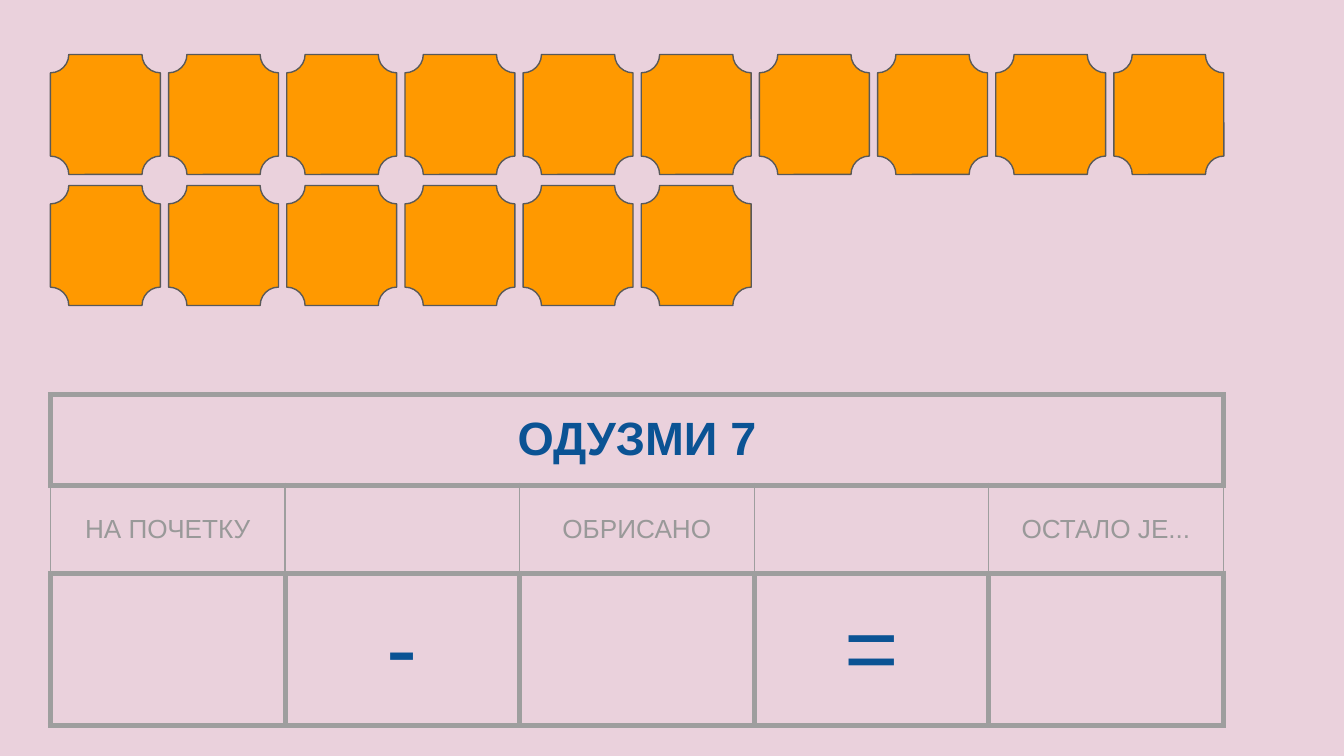
from dataclasses import dataclass

from lxml import etree
from pptx import Presentation
from pptx.dml.color import RGBColor
from pptx.enum.shapes import MSO_SHAPE as Shape
from pptx.enum.text import MSO_ANCHOR as Anchor, PP_ALIGN as Align
from pptx.oxml.ns import qn
from pptx.util import Pt


@dataclass(frozen=True)
class Theme:
    font: str = "Arial"
    background: str = "EAD1DC"
    tile: str = "FF9900"
    tile_line: str = "595959"
    border: str = "9E9E9E"
    accent: str = "0B5394"
    label: str = "999999"
    title_size: int = 25
    label_size: int = 14
    sign_size: int = 50
    thin: float = 0.75
    thick: float = 3


theme = Theme()


def set_borders(cell, side_width):
    """Draw the left and right edges at side_width, top and bottom thick."""
    properties = cell._tc.get_or_add_tcPr()
    widths = {"a:lnL": side_width, "a:lnR": side_width,
              "a:lnT": theme.thick, "a:lnB": theme.thick}
    for tag, width in widths.items():
        line = etree.SubElement(properties, qn(tag), w=str(Pt(width)))
        fill = etree.SubElement(line, qn("a:solidFill"))
        etree.SubElement(fill, qn("a:srgbClr"), val=theme.border)


presentation = Presentation()
presentation.slide_width, presentation.slide_height = Pt(720), Pt(405)
slide = presentation.slides.add_slide(presentation.slide_layouts[6])
slide.background.fill.solid()
slide.background.fill.fore_color.rgb = RGBColor.from_string(theme.background)

left = 27.05

# Subtraction table
column_width = 125.68
row_heights = [48.5, 47.3, 81.4]
rows = [
    ["ОДУЗМИ 7", "", "", "", ""],
    ["НА ПОЧЕТКУ", "", "ОБРИСАНО", "", "ОСТАЛО ЈЕ..."],
    ["", "-", "", "=", ""],
]
row_styles = [  # size, colour, bold, width of the side borders
    (theme.title_size, theme.accent, True, theme.thick),
    (theme.label_size, theme.label, False, theme.thin),
    (theme.sign_size, theme.accent, False, theme.thick),
]
table = slide.shapes.add_table(
    len(rows), 5, Pt(left), Pt(211.4), Pt(5 * column_width), Pt(sum(row_heights))
).table
table.first_row = table.horz_banding = False
for column in table.columns:
    column.width = Pt(column_width)

for row, height, texts, style in zip(table.rows, row_heights, rows, row_styles):
    row.height = Pt(height)
    size, color, bold, side_width = style
    for cell, text in zip(row.cells, texts):
        set_borders(cell, side_width)
        cell.fill.background()
        cell.vertical_anchor = Anchor.MIDDLE
        cell.margin_left = cell.margin_right = Pt(7.2)
        cell.margin_top = cell.margin_bottom = Pt(7.2)
        cell.text_frame.text = text
        paragraph = cell.text_frame.paragraphs[0]
        paragraph.alignment = Align.CENTER
        for run in paragraph.runs:
            run.font.name = theme.font
            run.font.size = Pt(size)
            run.font.bold = bold
            run.font.color.rgb = RGBColor.from_string(color)
table.cell(0, 0).merge(table.cell(0, 4))

# Counting tiles: ten in the first row, six in the second
for tile_row, count in enumerate([10, 6]):
    for tile_column in range(count):
        tile = slide.shapes.add_shape(
            Shape.PLAQUE,
            Pt(left + 63.3 * tile_column), Pt(29.2 + 70.2 * tile_row),
            Pt(58.9), Pt(64.3),
        )
        tile.adjustments[0] = 0.167
        tile.shadow.inherit = False
        tile.fill.solid()
        tile.fill.fore_color.rgb = RGBColor.from_string(theme.tile)
        tile.line.color.rgb = RGBColor.from_string(theme.tile_line)
        tile.line.width = Pt(theme.thin)

presentation.save("out.pptx")
